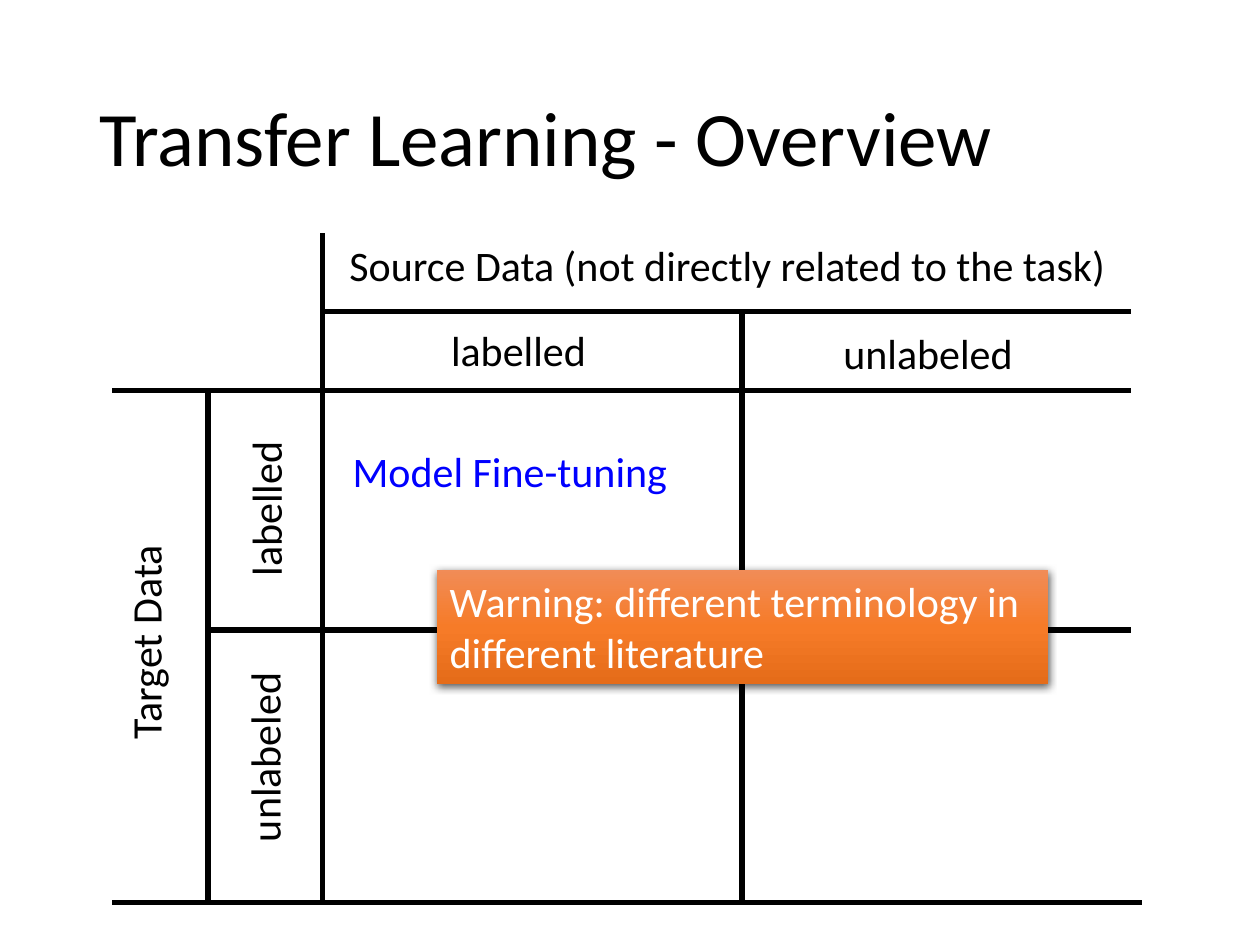
from copy import deepcopy
from dataclasses import dataclass

from lxml.etree import SubElement
from pptx import Presentation
from pptx.dml.color import RGBColor
from pptx.enum.shapes import MSO_CONNECTOR, MSO_SHAPE
from pptx.enum.text import MSO_ANCHOR, PP_ALIGN
from pptx.oxml.ns import qn
from pptx.shapes.autoshape import Shape
from pptx.slide import Slide
from pptx.util import Inches, Pt

FONT = "Calibri"
COLORS = {
    "text": "000000",
    "method": "0000FF",
    "warning_text": "FFFFFF",
    "warning_top": "F18C57",
    "warning_middle": "F67B28",
    "warning_bottom": "E56C19",
    "shadow": "000000",
}

# Grid positions of the matrix, in inches
LEFT, TARGET_X, SOURCE_X, MIDDLE_X, RIGHT = 0.89, 1.65, 2.56, 5.89, 8.98
TOP, HEADER_Y, BODY_Y, MIDDLE_Y, BOTTOM = 1.85, 2.47, 3.1, 5, 7.16
LABEL_WIDTH, LABEL_HEIGHT = 1.69, 0.5


@dataclass
class Rule:
    x1: float
    y1: float
    x2: float
    y2: float


@dataclass
class Label:
    text: str
    left: float
    top: float
    width: float = LABEL_WIDTH
    height: float = LABEL_HEIGHT
    rotation: float = 0
    align: PP_ALIGN = PP_ALIGN.CENTER
    size: float = 24
    color: str = "text"
    anchor: MSO_ANCHOR = MSO_ANCHOR.TOP
    line_spacing: float = 1


RULES = [
    Rule(SOURCE_X, TOP, SOURCE_X, BOTTOM),
    Rule(MIDDLE_X, HEADER_Y, MIDDLE_X, BOTTOM),
    Rule(TARGET_X, BODY_Y, TARGET_X, BOTTOM),
    Rule(SOURCE_X, HEADER_Y, RIGHT, HEADER_Y),
    Rule(LEFT, BODY_Y, RIGHT, BODY_Y),
    Rule(TARGET_X, MIDDLE_Y, RIGHT, MIDDLE_Y),
    Rule(LEFT, BOTTOM, 9.06, BOTTOM),
]

LABELS = [
    Label("Transfer Learning - Overview", 0.69, 0.4, 8.62, 1.45, size=44,
          align=PP_ALIGN.LEFT, anchor=MSO_ANCHOR.MIDDLE, line_spacing=0.9),
    Label("Target Data ", -0.65, 4.81, 3.6, rotation=270),
    Label("Source Data (not directly related to the task) ", SOURCE_X, TOP, 6.5),
    Label("labelled", 3.27, 2.53),
    Label("unlabeled", 6.52, 2.55),
    Label("labelled", 1.26, 3.79, rotation=270),
    Label("unlabeled", 1.25, 5.76, rotation=270),
    Label("Model Fine-tuning", 2.7, 3.49, 2.99, align=PP_ALIGN.LEFT, color="method"),
]

WARNING = Label("Warning: different terminology in different literature",
                3.47, 4.52, 4.85, 0.91, align=PP_ALIGN.LEFT, color="warning_text")


def rgb(name: str) -> RGBColor:
    return RGBColor.from_string(COLORS[name])


def draw_rule(slide: Slide, rule: Rule) -> None:
    connector = slide.shapes.add_connector(
        MSO_CONNECTOR.STRAIGHT, Inches(rule.x1), Inches(rule.y1),
        Inches(rule.x2), Inches(rule.y2))
    connector.line.color.rgb = rgb("text")
    connector.line.width = Pt(3)
    SubElement(connector._element.spPr, qn("a:effectLst"))


def write_text(shape: Shape, label: Label) -> None:
    text_frame = shape.text_frame
    text_frame.text = label.text
    text_frame.word_wrap = True
    text_frame.vertical_anchor = label.anchor
    paragraph = text_frame.paragraphs[0]
    paragraph.alignment = label.align
    paragraph.line_spacing = label.line_spacing
    font = paragraph.runs[0].font
    font.name = FONT
    font.size = Pt(label.size)
    font.color.rgb = rgb(label.color)


def draw_label(slide: Slide, label: Label) -> None:
    text_box = slide.shapes.add_textbox(
        Inches(label.left), Inches(label.top), Inches(label.width), Inches(label.height))
    text_box.rotation = label.rotation
    write_text(text_box, label)


def fill_with_gradient(shape: Shape, color_names: list[str]) -> None:
    """Fill from top to bottom with three evenly spaced colours."""
    shape.fill.gradient()
    shape.fill.gradient_angle = 270
    stop_list = shape._element.spPr.find(qn("a:gradFill")).find(qn("a:gsLst"))
    stop_list.append(deepcopy(stop_list[-1]))
    stops = shape.fill.gradient_stops
    for index, (stop, name) in enumerate(zip(stops, color_names)):
        stop.position = index / (len(color_names) - 1)
        stop.color.rgb = rgb(name)


def add_drop_shadow(shape: Shape) -> None:
    shape.shadow.inherit = False
    effects = shape._element.spPr.find(qn("a:effectLst"))
    shadow = SubElement(effects, qn("a:outerShdw"), blurRad=str(Pt(4.5)),
                        dist=str(Pt(1.5)), dir="5400000", rotWithShape="0")
    color = SubElement(shadow, qn("a:srgbClr"), val=COLORS["shadow"])
    SubElement(color, qn("a:alpha"), val="63000")


def draw_warning(slide: Slide, label: Label) -> None:
    box = slide.shapes.add_shape(
        MSO_SHAPE.RECTANGLE, Inches(label.left), Inches(label.top),
        Inches(label.width), Inches(label.height))
    fill_with_gradient(box, ["warning_top", "warning_middle", "warning_bottom"])
    box.line.fill.background()
    add_drop_shadow(box)
    write_text(box, label)


def main() -> None:
    presentation = Presentation()
    presentation.slide_width = Inches(10)
    presentation.slide_height = Inches(7.5)
    slide = presentation.slides.add_slide(presentation.slide_layouts[6])
    for rule in RULES:
        draw_rule(slide, rule)
    for label in LABELS:
        draw_label(slide, label)
    draw_warning(slide, WARNING)
    presentation.save("out.pptx")


if __name__ == "__main__":
    main()
